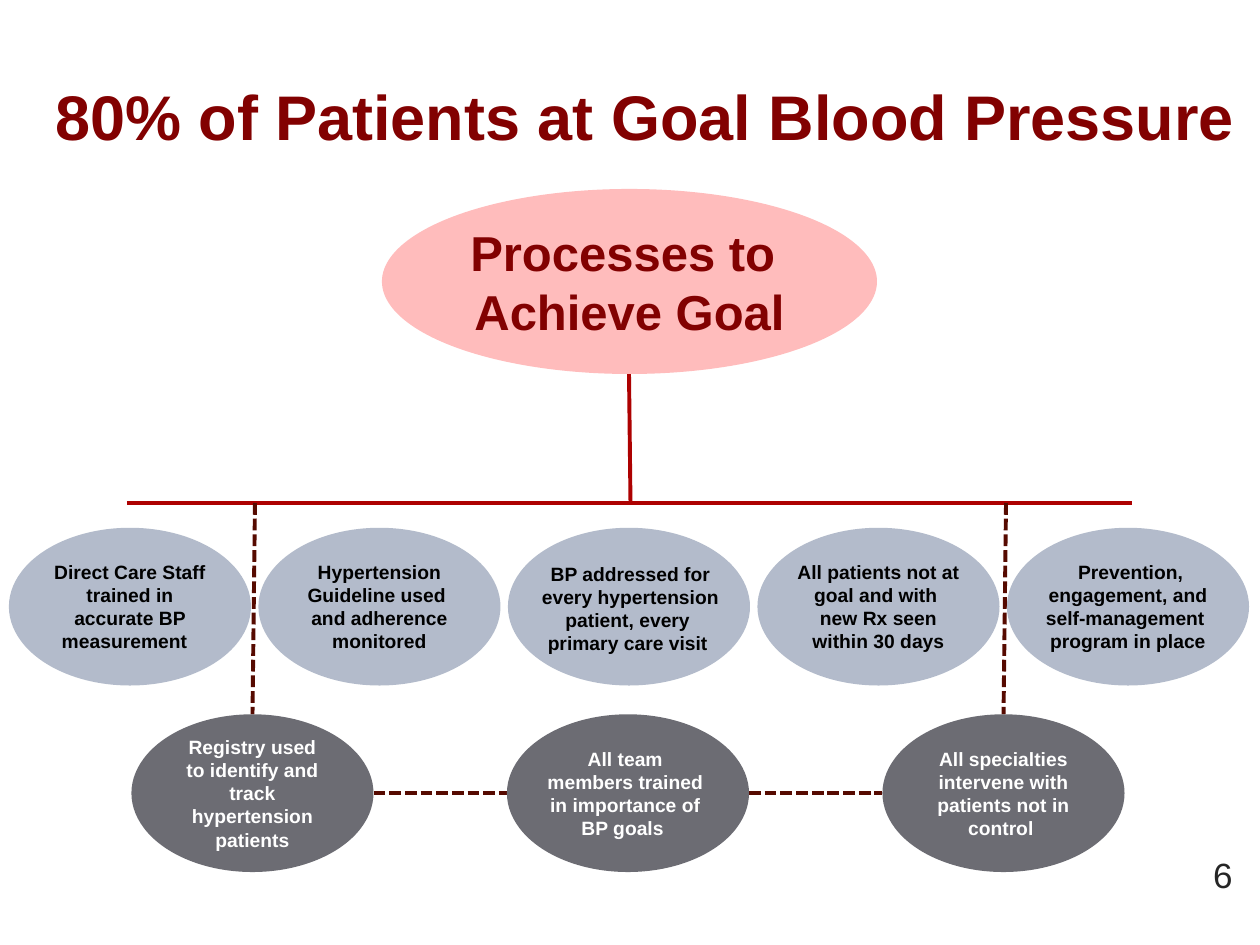
from lxml import etree
from pptx import Presentation
from pptx.dml.color import RGBColor
from pptx.enum import dml, shapes, text
from pptx.oxml import ns
from pptx.util import Cm, Pt

TITLE = "80% of Patients at Goal Blood Pressure"
GOAL = "Processes to \nAchieve Goal"
PROCESSES = [
    "Direct Care Staff trained in accurate BP measurement  ",
    "Hypertension Guideline used \nand adherence monitored",
    "",  # its label is wider than the oval and is placed separately
    "All patients not at goal and with \nnew Rx seen within 30 days",
    " Prevention, engagement, and self-management  program in place",
]
VISIT_LABEL = "BP addressed for every hypertension patient, every  primary care visit "
SUPPORTS = [
    "Registry used\nto identify and track hypertension patients",
    "All team \nmembers trained \nin importance of \nBP goals  ",
    "All specialties intervene with patients not in control ",
]
PAGE = "6"

MAROON, RED, DARK_RED = "820101", "AD0101", "560A00"
PINK, BLUE_GREY, GREY = "FFBCBC", "B3BBCB", "6C6C73"

OVAL_W, OVAL_H = 4.88, 3.18
PROCESS_LEFT, PROCESS_TOP, PROCESS_STEP = 0.18, 10.64, 5.03
SUPPORT_LEFT, SUPPORT_TOP, SUPPORT_STEP = 2.65, 14.4, 7.57
BAR_Y = 10.14
GOAL_BOX = (7.7, 3.81, 9.98, 3.73)

prs = Presentation()
prs.slide_width, prs.slide_height = Cm(25.4), Cm(19.05)
s = prs.slides.add_slide(prs.slide_layouts[6])


def rgb(value):
    return RGBColor.from_string(value)


def write(sp, words, size, color, bold=True, align=text.PP_ALIGN.CENTER):
    tf = sp.text_frame
    tf.word_wrap = True
    tf.vertical_anchor = text.MSO_ANCHOR.MIDDLE
    p = tf.paragraphs[0]
    p.text = words
    p.alignment = align
    for r in p.runs:
        r.font.name, r.font.size, r.font.bold = "Arial", Pt(size), bold
        r.font.color.rgb = rgb(color)


def textbox(box, words, size, color, **style):
    write(s.shapes.add_textbox(*map(Cm, box)), words, size, color, **style)


def oval(box, fill, words="", size=11, color="000000", side_inset=0):
    sp = s.shapes.add_shape(shapes.MSO_SHAPE.OVAL, *map(Cm, box))
    sp.shadow.inherit = False
    sp.line.fill.background()
    if fill:
        sp.fill.solid()
        sp.fill.fore_color.rgb = rgb(fill)
    else:
        sp.fill.background()
    sp.text_frame.margin_left = sp.text_frame.margin_right = Cm(side_inset)
    if words:
        write(sp, words, size, color)


def line(x1, y1, x2, y2, color, dashed=False):
    c = s.shapes.add_connector(shapes.MSO_CONNECTOR.STRAIGHT, *map(Cm, (x1, y1, x2, y2)))
    c.line.color.rgb = rgb(color)
    c.line.width = Pt(2.25)
    if dashed:
        c.line.dash_style = dml.MSO_LINE.SQUARE_DOT
    etree.SubElement(c._element.spPr, ns.qn("a:effectLst"))


textbox((0.84, 0, 24.33, 4.65), TITLE, 36, MAROON)
oval(GOAL_BOX, PINK, GOAL, 28, MAROON, side_inset=0.25)

# Solid trunk and bar below the goal
line(12.68, GOAL_BOX[1] + GOAL_BOX[3], 12.71, BAR_Y, RED)
line(2.56, BAR_Y, 22.82, BAR_Y, RED)

# Dashed links to and between the supporting ovals
support_xs = [SUPPORT_LEFT + i * SUPPORT_STEP for i in range(len(SUPPORTS))]
for x in (support_xs[0], support_xs[-1]):
    center = x + OVAL_W / 2
    line(center + 0.05, BAR_Y, center, SUPPORT_TOP, DARK_RED, dashed=True)
link_y = SUPPORT_TOP + OVAL_H / 2
for x, following in zip(support_xs, support_xs[1:]):
    line(x + OVAL_W, link_y, following, link_y, DARK_RED, dashed=True)

for i, words in enumerate(PROCESSES):
    oval((PROCESS_LEFT + i * PROCESS_STEP, PROCESS_TOP, OVAL_W, OVAL_H), BLUE_GREY, words)
oval((10.08, 10.67, 5.26, OVAL_H), None, VISIT_LABEL)
for x, words in zip(support_xs, SUPPORTS):
    oval((x, SUPPORT_TOP, OVAL_W, OVAL_H), GREY, words, color="FFFFFF")

textbox((22.99, 17.12, 2.11, 1.02), PAGE, 20, "262626", bold=False, align=text.PP_ALIGN.RIGHT)

prs.save("out.pptx")
